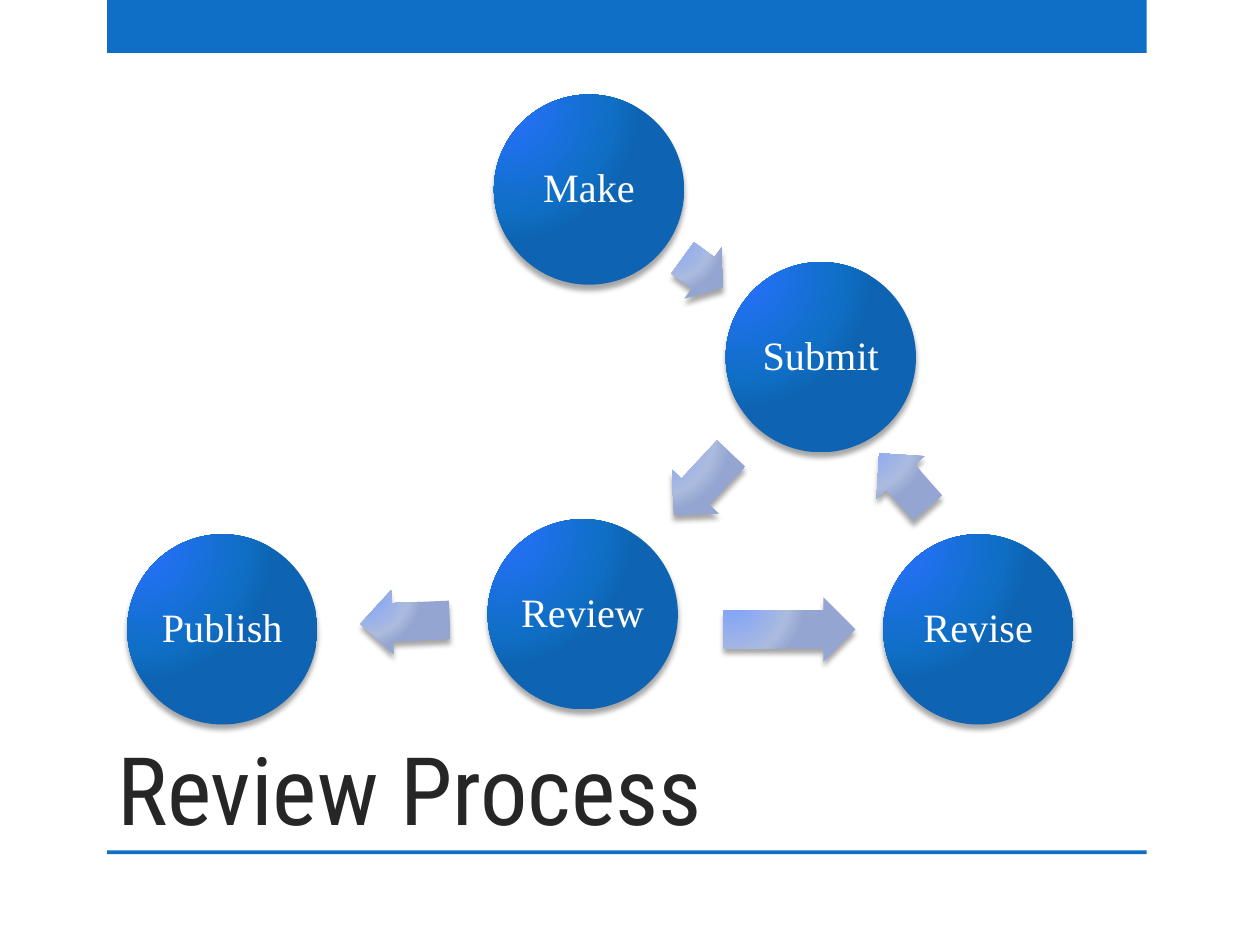
import pptx
import pptx.util
import pptx.oxml
import pptx.oxml.ns
import pptx.dml.color
import pptx.enum.shapes
import pptx.enum.text

Inches = pptx.util.Inches
Pt = pptx.util.Pt
Shape = pptx.enum.shapes.MSO_SHAPE
Align = pptx.enum.text.PP_ALIGN
Anchor = pptx.enum.text.MSO_ANCHOR
NS = pptx.oxml.ns.nsdecls("a")


def color(code):
    return pptx.dml.color.RGBColor.from_string(code)


class Deck:
    blue, dark, white = "0F6FC6", "262626", "FFFFFF"
    head, body = "Roboto Condensed", "Times New Roman"
    ball = ((0, "2871FF"), (76, "0F6FC6"), (100, "0E64B2"))
    pale = ((0, "7CA1FC"), (76, "ABBBDF"), (100, "93A5D0"))
    size = 1.51    # circle diameter
    thick = 0.51   # arrow height

    def __init__(self):
        self.file = pptx.Presentation()
        self.file.slide_width, self.file.slide_height = Inches(10), Inches(7.5)
        self.slide = self.file.slides.add_slide(self.file.slide_layouts[5])

    def shape(self, kind, *box):
        item = self.slide.shapes.add_shape(kind, *map(Inches, box))
        item.shadow.inherit = False
        item.line.fill.background()
        return item

    def bar(self, top, height):
        item = self.shape(Shape.RECTANGLE, 0.85, top, 8.25, height)
        item.fill.solid()
        item.fill.fore_color.rgb = color(self.blue)

    def label(self, frame, text, font, size, hue, align, anchor):
        frame.text = text
        frame.word_wrap = True
        frame.auto_size = pptx.enum.text.MSO_AUTO_SIZE.NONE
        frame.vertical_anchor = anchor
        line = frame.paragraphs[0]
        line.alignment = align
        line.font.name, line.font.size = font, Pt(size)
        line.font.color.rgb = color(hue)
        return line

    def title(self, text, *box):
        item = self.slide.shapes.title
        item.left, item.top, item.width, item.height = map(Inches, box)
        self.label(item.text_frame, text, self.head, 54, self.dark,
                   Align.LEFT, Anchor.BOTTOM)

    def shade(self, item, stops):
        # Radial gradient from the upper left, with a soft shadow below
        marks = "".join(f'<a:gs pos="{pos * 1000}"><a:srgbClr val="{hue}"/></a:gs>'
                        for pos, hue in stops)
        fill = pptx.oxml.parse_xml(
            f'<a:gradFill {NS} rotWithShape="1"><a:gsLst>{marks}</a:gsLst>'
            '<a:path path="circle"><a:fillToRect l="15000" t="15000" '
            'r="100000" b="100000"/></a:path></a:gradFill>')
        cast = pptx.oxml.parse_xml(
            f'<a:outerShdw {NS} blurRad="{Pt(3)}" dist="{Pt(3)}" dir="5400000" '
            'rotWithShape="0"><a:srgbClr val="000000"><a:alpha val="35000"/>'
            '</a:srgbClr></a:outerShdw>')
        props = item.element.spPr
        props.find(pptx.oxml.ns.qn("a:ln")).addprevious(fill)
        props.find(pptx.oxml.ns.qn("a:effectLst")).append(cast)

    def circle(self, text, left, top):
        item = self.shape(Shape.OVAL, left, top, self.size, self.size)
        self.shade(item, self.ball)
        frame = item.text_frame
        frame.margin_left = frame.margin_right = Inches(0.03)
        frame.margin_top = frame.margin_bottom = Inches(0.03)
        line = self.label(frame, text, self.body, 23, self.white,
                          Align.CENTER, Anchor.MIDDLE)
        line.line_spacing = 0.9

    def arrow(self, left, top, width, turn):
        item = self.shape(Shape.RIGHT_ARROW, left, top, width, self.thick)
        item.adjustments[0], item.adjustments[1] = 0.6, 0.5
        item.rotation = turn
        self.shade(item, self.pale)


def main():
    deck = Deck()

    # Top band and rule under the title
    deck.bar(0, 0.42)
    deck.bar(6.75, 0.03)
    deck.title("Review Process", 0.83, 5, 7.42, 1.75)

    # Steps
    for step in (("Make", 3.92, 0.75), ("Submit", 5.76, 2.08),
                 ("Review", 3.87, 4.12), ("Publish", 1.01, 4.24),
                 ("Revise", 7.01, 4.24)):
        deck.circle(*step)

    # Arrows: left, top, width, rotation
    for link in ((5.38, 1.91, 0.4, 36),         # Make to Submit
                 (5.24, 3.59, 0.67, 132.9),     # Submit to Review
                 (2.86, 4.68, 0.71, 177.5),     # Review to Publish
                 (5.74, 4.74, 1.05, 0),         # Review to Revise
                 (6.88, 3.56, 0.58, 228.5)):    # Revise to Submit
        deck.arrow(*link)

    deck.file.save("out.pptx")


if __name__ == "__main__":
    main()
